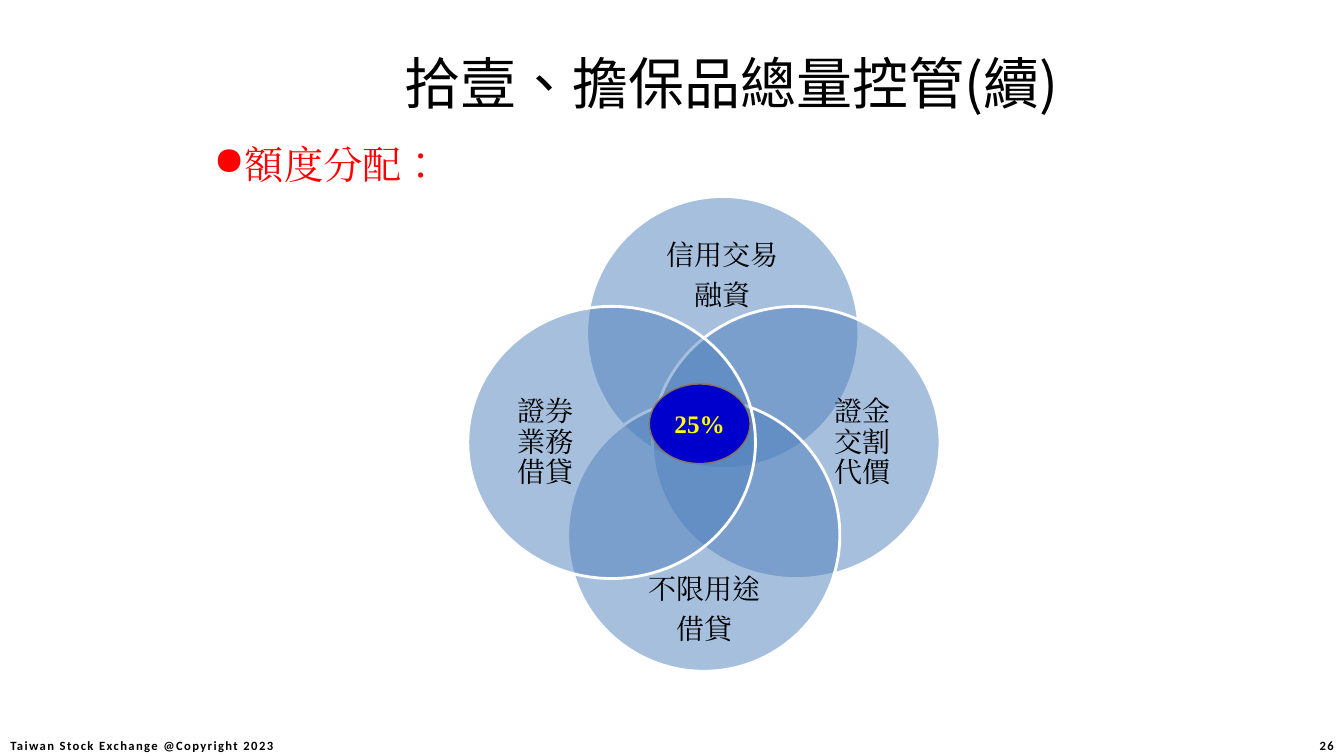
import pptx
import pptx.util
import pptx.dml.color
import pptx.enum.shapes
import pptx.enum.text
import lxml.etree

COLOURS = {"black": "000000", "white": "FFFFFF", "red": "FF0000", "petal": "4F81BD",
           "badge": "0000CC", "badge_line": "8A735F", "yellow": "FFFF00"}
ALIGN = pptx.enum.text.PP_ALIGN
ANCHOR = pptx.enum.text.MSO_ANCHOR
DRAWING = "{http://schemas.openxmlformats.org/drawingml/2006/main}"


class VennPage:
    """Draws styled elements on one page, with lengths in percent of its width and height."""

    def __init__(self, deck):
        self.deck = deck
        self.page = deck.slides.add_slide(deck.slide_layouts[6])

    def place(self, left, top, width, height):
        across, down = self.deck.slide_width / 100, self.deck.slide_height / 100
        return [int(length) for length in
                (left * across, top * down, width * across, height * down)]

    def colour(self, name):
        return pptx.dml.color.RGBColor.from_string(COLOURS[name])

    def fill_text(self, shape, lines, size, font="Cambria", colour="black", bold=False,
                  align=ALIGN.CENTER, anchor=ANCHOR.MIDDLE, leading=1.0, after=0,
                  tracking=0, bullet=None):
        frame = shape.text_frame
        frame.word_wrap = True
        frame.vertical_anchor = anchor
        frame.margin_left = frame.margin_right = frame.margin_top = frame.margin_bottom = 0
        for index, line in enumerate(lines):
            para = frame.add_paragraph() if index else frame.paragraphs[0]
            if bullet:
                properties = para._p.get_or_add_pPr()
                properties.set("marL", str(pptx.util.Inches(0.39)))
                properties.set("indent", str(pptx.util.Inches(-0.31)))
                lxml.etree.SubElement(properties, DRAWING + "buChar", char=bullet)
            para.alignment = align
            para.line_spacing = leading
            para.space_after = pptx.util.Pt(after)
            span = para.add_run()
            span.text = line
            span.font.size = pptx.util.Pt(size)
            span.font.bold = bold
            span.font.name = font
            span.font.color.rgb = self.colour(colour)
            style = span._r.get_or_add_rPr()
            style.set("lang", "zh-TW")
            if tracking:
                style.set("spc", str(tracking * 100))
            east_asian = lxml.etree.Element(DRAWING + "ea", typeface=font)
            style.find(DRAWING + "latin").addnext(east_asian)

    def text(self, area, lines, size, **style):
        box = self.page.shapes.add_textbox(*self.place(*area))
        self.fill_text(box, lines, size, **style)

    def ellipse(self, area, fill, line, line_width, opacity=100):
        shape = self.page.shapes.add_shape(
            pptx.enum.shapes.MSO_SHAPE.OVAL, *self.place(*area))
        shape.shadow.inherit = False
        shape.fill.solid()
        shape.fill.fore_color.rgb = self.colour(fill)
        shape.line.color.rgb = self.colour(line)
        shape.line.width = pptx.util.Pt(line_width)
        if opacity < 100:
            tint = shape._element.spPr.find(f"{DRAWING}solidFill/{DRAWING}srgbClr")
            lxml.etree.SubElement(tint, DRAWING + "alpha", val=str(opacity * 1000))
        return shape

    def petal(self, circle, label, lines):
        self.ellipse(circle, "petal", "white", 2, opacity=50)
        self.text(label, lines, 20, leading=0.9, after=7)


def main():
    deck = pptx.Presentation()
    deck.slide_width = pptx.util.Inches(13.33)
    deck.slide_height = pptx.util.Inches(7.5)
    venn = VennPage(deck)

    footer = {"font": "Calibri", "bold": True, "tracking": 1}
    venn.text((0, 97.33, 21.1, 2.67), ["Taiwan Stock Exchange @Copyright 2023"], 9, **footer)
    venn.text((95.6, 97.33, 3.65, 2.67), ["26"], 9, align=ALIGN.RIGHT, **footer)
    venn.text((13.28, 4.67, 82.3, 11), ["拾壹、擔保品總量控管(續)"], 40,
              font="Noto Sans CJK SC", anchor=ANCHOR.TOP, leading=1.2)
    venn.text((15.3, 18.53, 80.8, 73), ["額度分配："], 28, colour="red",
              align=ALIGN.LEFT, anchor=ANCHOR.TOP, bullet="●")

    petals = [
        ((43.66, 26, 20.25, 36), (48.24, 32.53, 11.03, 8), ["信用交易", "融資"]),
        ((48.54, 40.53, 21.4, 36), (61.22, 48.8, 5.85, 19.6), ["證金交割代價"]),
        ((42.24, 52.8, 20.25, 36), (46.89, 76.8, 11.03, 8), ["不限用途", "借貸"]),
        ((34.81, 40.53, 21.4, 36), (37.66, 48.8, 5.85, 19.6), ["證券業務借貸"]),
    ]
    for circle, label, lines in petals:
        venn.petal(circle, label, lines)

    badge = venn.ellipse((48.31, 50.8, 7.5, 10.53), "badge", "badge_line", 1)
    venn.fill_text(badge, ["25%"], 18, font="Times New Roman", colour="yellow", bold=True)

    deck.save("out.pptx")


if __name__ == "__main__":
    main()
